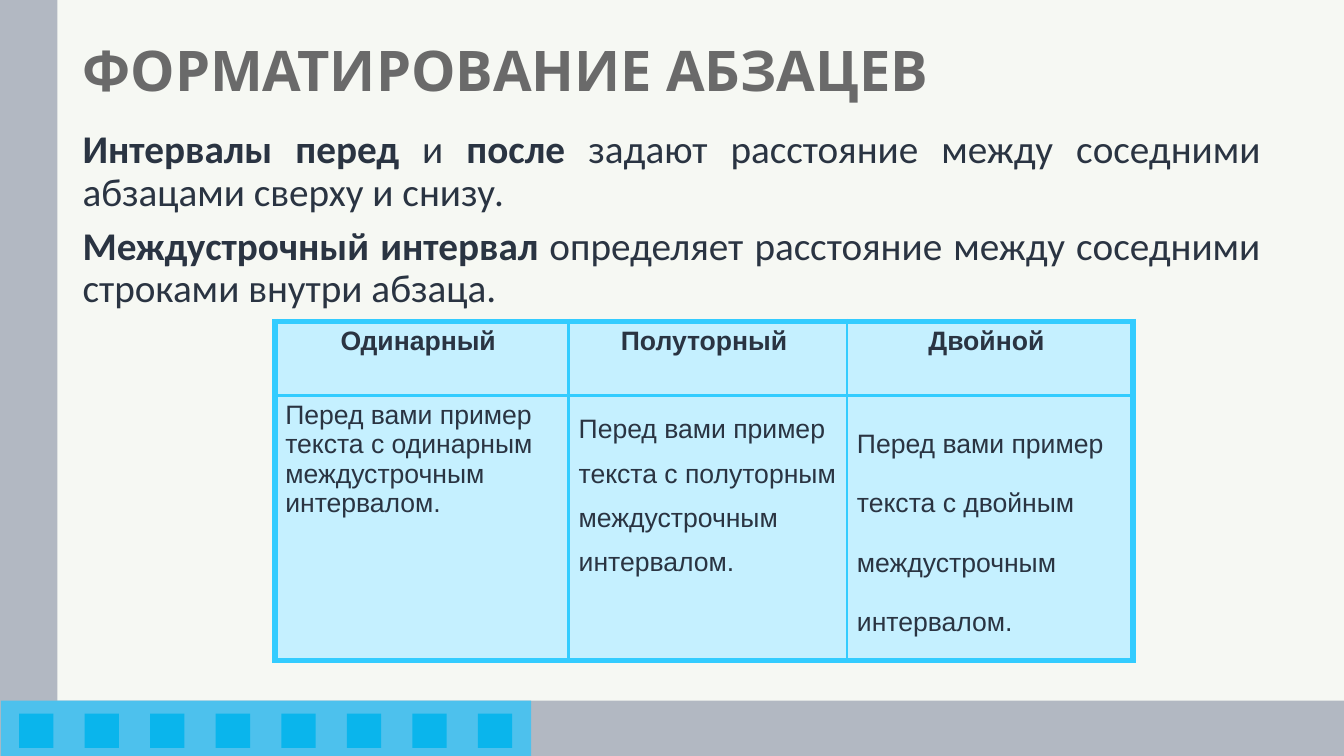
from lxml.etree import SubElement as Sub
from pptx import Presentation
from pptx.dml.color import RGBColor
from pptx.enum.shapes import MSO_SHAPE as Shape
from pptx.enum.text import MSO_ANCHOR as Anchor, PP_ALIGN as Align
from pptx.oxml.ns import qn
from pptx.util import Inches, Pt

PAPER = RGBColor(0xF6, 0xF8, 0xF3)
GREY = RGBColor(0xB2, 0xB8, 0xC2)
SKY = RGBColor(0x4D, 0xC1, 0xED)
BLUE = RGBColor(0x0A, 0xB5, 0xEC)
HEAD = RGBColor(0x6A, 0x6A, 0x6A)
INK = RGBColor(0x2A, 0x34, 0x42)
PALE = RGBColor(0xC5, 0xF0, 0xFF)
EDGE = RGBColor(0x33, 0xCC, 0xFF)
THICK, THIN = Pt(4.5), Pt(2.25)


class Deck:
    def __init__(self):
        self.show = Presentation()
        self.show.slide_width = Inches(13.33)
        self.show.slide_height = Inches(7.5)
        self.slide = self.show.slides.add_slide(self.show.slide_layouts[6])
        fill = self.slide.background.fill
        fill.solid()
        fill.fore_color.rgb = PAPER

    def bar(self, box, color):
        rect = self.slide.shapes.add_shape(Shape.RECTANGLE, *map(Inches, box))
        rect.shadow.inherit = False
        rect.fill.solid()
        rect.fill.fore_color.rgb = color
        rect.line.fill.background()

    def style(self, para, font, size, color, align, lines, before):
        para.alignment = align
        para.line_spacing = lines
        para.space_before = Pt(before)
        for run in para.runs:
            run.font.name = font
            run.font.size = Pt(size)
            run.font.color.rgb = color

    def text(self, box, paras, font, size, color, align, before, anchor):
        """Each paragraph is a list of (wording, bold) pairs."""
        frame = self.slide.shapes.add_textbox(*map(Inches, box)).text_frame
        frame.word_wrap = True
        frame.vertical_anchor = anchor
        for i, parts in enumerate(paras):
            para = frame.add_paragraph() if i else frame.paragraphs[0]
            for words, bold in parts:
                run = para.add_run()
                run.text = words
                run.font.bold = bold
            self.style(para, font, size, color, align, 0.9, before)

    def border(self, cell, sides):
        props = cell._tc.get_or_add_tcPr()
        for i, (side, width) in enumerate(sides.items()):
            line = props.makeelement(qn(f"a:ln{side}"), {"w": str(width)})
            fill = Sub(line, qn("a:solidFill"))
            Sub(fill, qn("a:srgbClr"), val=str(EDGE))
            props.insert(i, line)

    def table(self, box, rows, widths, heights, spacing):
        last, end = len(rows) - 1, len(widths) - 1
        table = self.slide.shapes.add_table(
            len(rows), len(widths), *map(Inches, box)).table
        for col, width in zip(table.columns, widths):
            col.width = Inches(width)
        for row, height in zip(table.rows, heights):
            row.height = Inches(height)
        for r, row in enumerate(rows):
            for c, words in enumerate(row):
                cell = table.cell(r, c)
                cell.fill.solid()
                cell.fill.fore_color.rgb = PALE
                cell.text_frame.text = words
                para = cell.text_frame.paragraphs[0]
                para.runs[0].font.bold = r == 0
                lines = spacing[c] if r else 1.0
                self.style(para, "Arial", 19, INK,
                           Align.LEFT if r else Align.CENTER,
                           lines, 3.8 if lines == 1 else 0)
                self.border(cell, {
                    "L": THIN if c else THICK,
                    "R": THICK if c == end else THIN,
                    "T": THIN if r else THICK,
                    "B": THICK if r == last else THIN,
                })


def main():
    deck = Deck()

    # Frame bars and the row of squares
    deck.bar((0, 0, 0.57, 7.5), GREY)
    deck.bar((0, 6.95, 13.33, 0.55), GREY)
    deck.bar((0.01, 6.95, 5.26, 0.55), SKY)
    for i in range(8):
        deck.bar((0.19 + 0.65 * i, 7.08, 0.34, 0.34), BLUE)

    # Title
    deck.text((0.72, 0, 11.88, 1.45), [[("ФОРМАТИРОВАНИЕ АБЗАЦЕВ", True)]],
              "Karla", 40, HEAD, Align.LEFT, 0, Anchor.MIDDLE)

    # Definitions
    deck.text((0.72, 1.24, 11.88, 1.98), [
        [("Интервалы перед ", True), ("и", False), (" после ", True),
         ("задают расстояние между соседними абзацами сверху и снизу.",
          False)],
        [("Междустрочный интервал", True),
         (" определяет расстояние между соседними строками внутри абзаца.",
          False)],
    ], "Calibri", 28, INK, Align.JUSTIFY, 8.4, Anchor.TOP)

    # Line spacing samples
    kinds = ("одинарным", "полуторным", "двойным")
    deck.table((2.73, 3.19, 8.51, 3.21), [
        ("Одинарный ", "Полуторный ", "Двойной "),
        [f"Перед вами пример текста с {kind} междустрочным интервалом."
         for kind in kinds],
    ], (2.91, 2.76, 2.84), (0.73, 2.48), (1.0, 1.5, 2.0))

    deck.show.save("out.pptx")


if __name__ == "__main__":
    main()
